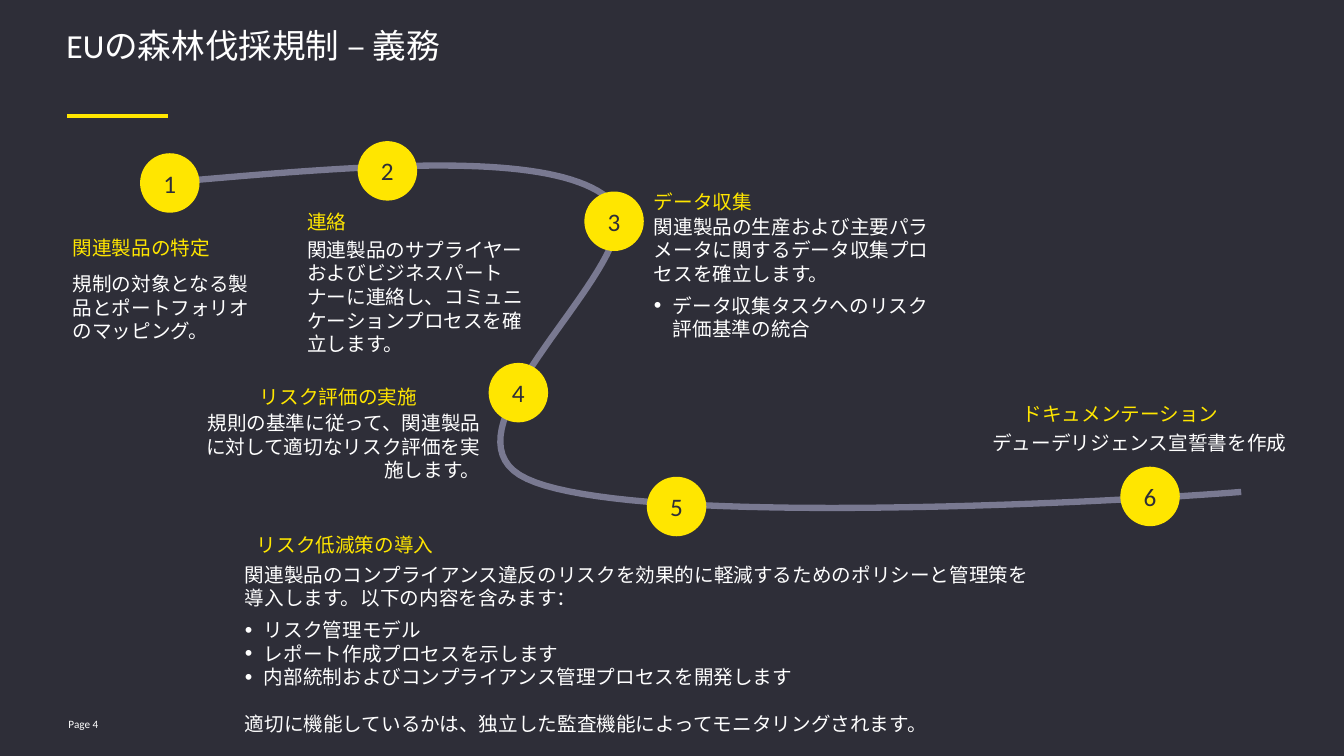
from lxml import etree
from pptx import Presentation, util as u
from pptx.dml.color import RGBColor
from pptx.enum import shapes, text
from pptx.oxml.ns import qn

PX = 9144  # 100 px to the inch
FONT = "Calibri"
DARK, GOLD, WHITE, MAUVE = "2E2E38", "FFE600", "FFFFFF", "797991"
LEFT, MID, RIGHT = text.PP_ALIGN.LEFT, text.PP_ALIGN.CENTER, text.PP_ALIGN.RIGHT
TOP, CORE = text.MSO_ANCHOR.TOP, text.MSO_ANCHOR.MIDDLE

# Road: start point, then cubic curves of two controls and an end
START = (155, 182)
CURVES = [
    ((349, 165), (542, 147), (603, 196)),
    ((665, 245), (418, 427), (523, 475)),
    ((628, 524), (1108, 498), (1232, 488)),
]
DOT = 59
STOPS = [(139, 152), (355, 140), (580, 190), (485, 360), (642, 473), (1112, 463)]

# Headings: text, box, alignment
HEADS = [
    ("関連製品の特定", (72, 221, 195, 50), LEFT),
    ("連絡", (305, 195, 195, 50), LEFT),
    ("データ収集", (649, 175, 172, 50), LEFT),
    ("リスク評価の実施", (165, 369, 249, 50), RIGHT),
    ("リスク低減策の導入", (255, 515, 460, 50), LEFT),
    ("ドキュメンテーション", (1015, 385, 276, 50), LEFT),
]

# Body texts: paragraphs, box, format; "• " marks a bullet
BODIES = [
    (["規制の対象となる製品とポートフォリオのマッピング。"], (72, 270, 183, 100), {}),
    (["関連製品のサプライヤーおよびビジネスパートナーに連絡し、"
      "コミュニケーションプロセスを確立します。"], (305, 236, 223, 120), {}),
    (["関連製品の生産および主要パラメータに関するデータ収集プロセスを確立します。",
      "• データ収集タスクへのリスク評価基準の統合"], (649, 213, 276, 125), {}),
    (["規則の基準に従って、関連製品に対して適切なリスク評価を実施します。"],
     (201, 408, 276, 92), {"align": RIGHT}),
    (["関連製品のコンプライアンス違反のリスクを効果的に軽減するための"
      "ポリシーと管理策を導入します。以下の内容を含みます：",
      "• リスク管理モデル",
      "• レポート作成プロセスを示します",
      "• 内部統制およびコンプライアンス管理プロセスを開発します",
      "適切に機能しているかは、独立した監査機能によってモニタリングされます。"],
     (243, 568, 788, 152), {"anchor": CORE}),
    (["デューデリジェンス宣誓書を作成"], (985, 428, 296, 47), {}),
]


def rgb(code):
    return RGBColor.from_string(code)


def emu(*sizes):
    return [u.Emu(n * PX) for n in sizes]


def bullet(para):
    props = para._p.get_or_add_pPr()
    props.set("marL", str(19 * PX))
    props.set("indent", str(-19 * PX))
    etree.SubElement(props, qn("a:buSzPct")).set("val", "110000")
    etree.SubElement(props, qn("a:buFont")).set("typeface", "Arial")
    etree.SubElement(props, qn("a:buChar")).set("char", "•")


def write(shape, lines, size=14, color=WHITE, align=LEFT, anchor=TOP, pitch=None):
    """Fill a shape with paragraphs in one format."""
    frame = shape.text_frame
    frame.word_wrap = True
    frame.auto_size = text.MSO_AUTO_SIZE.NONE
    frame.vertical_anchor = anchor
    frame.margin_left = frame.margin_right = frame.margin_top = frame.margin_bottom = 0
    listed = False  # whether the paragraph before has a bullet
    for i, line in enumerate(lines):
        para = frame.paragraphs[0] if i == 0 else frame.add_paragraph()
        point = line.startswith("• ")
        if point:
            bullet(para)
            if not listed:
                para.space_before = u.Pt(6)
        elif listed:
            para.space_before = u.Pt(17)
        listed = point
        para.alignment = align
        if pitch:
            para.line_spacing = pitch
        run = para.add_run()
        run.text = line.removeprefix("• ")
        run.font.name, run.font.size = FONT, u.Pt(size)
        run.font.color.rgb = rgb(color)


def label(slide, lines, box, **style):
    write(slide.shapes.add_textbox(*emu(*box)), lines, **style)


def rule(slide, x1, x2, y):
    line = slide.shapes.add_connector(shapes.MSO_CONNECTOR.STRAIGHT, *emu(x1, y, x2, y))
    line.line.color.rgb, line.line.width = rgb(GOLD), u.Pt(3.25)
    etree.SubElement(line._element.spPr, qn("a:effectLst"))


def bend(start, one, two, end, steps=40):
    """Points along a cubic curve, after its start."""
    for t in (i / steps for i in range(1, steps + 1)):
        s = 1 - t
        yield tuple(round((s**3 * a + 3 * s * s * t * b + 3 * s * t * t * c + t**3 * d) * PX)
                    for a, b, c, d in zip(start, one, two, end))


def road(slide):
    points, last = [], START
    for curve in CURVES:
        points += bend(last, *curve)
        last = curve[-1]
    form = slide.shapes.build_freeform(*emu(*START), scale=1.0)
    form.add_line_segments(points, close=False)
    path = form.convert_to_shape()
    path.shadow.inherit = False
    path.fill.background()
    path.line.color.rgb, path.line.width = rgb(MAUVE), u.Pt(4.5)


def stop(slide, number, x, y):
    dot = slide.shapes.add_shape(shapes.MSO_SHAPE.FLOWCHART_CONNECTOR, *emu(x, y, DOT, DOT))
    dot.shadow.inherit = False
    dot.fill.solid()
    dot.fill.fore_color.rgb = rgb(GOLD)
    dot.line.fill.background()
    write(dot, [str(number)], size=18, color=DARK, align=MID, anchor=CORE)


def main():
    deck = Presentation()
    deck.slide_width, deck.slide_height = emu(1334, 750)
    slide = deck.slides.add_slide(deck.slide_layouts[5])
    slide.background.fill.solid()
    slide.background.fill.fore_color.rgb = rgb(DARK)

    # Title, rule and page number
    title = slide.shapes.title
    title.left, title.top, title.width, title.height = emu(66, 31, 1201, 65)
    write(title, ["EUの森林伐採規制 – 義務"], size=24, pitch=0.85)
    rule(slide, 67, 167, 115)
    label(slide, ["Page 4"], (68, 708, 73, 20), size=8, anchor=CORE)

    # Road with numbered stops
    road(slide)
    for number, spot in enumerate(STOPS, 1):
        stop(slide, number, *spot)

    # Texts of the six duties
    for head, box, align in HEADS:
        label(slide, [head], box, color=GOLD, align=align, anchor=CORE)
    for lines, box, style in BODIES:
        label(slide, lines, box, **style)

    deck.save("out.pptx")


if __name__ == "__main__":
    main()
